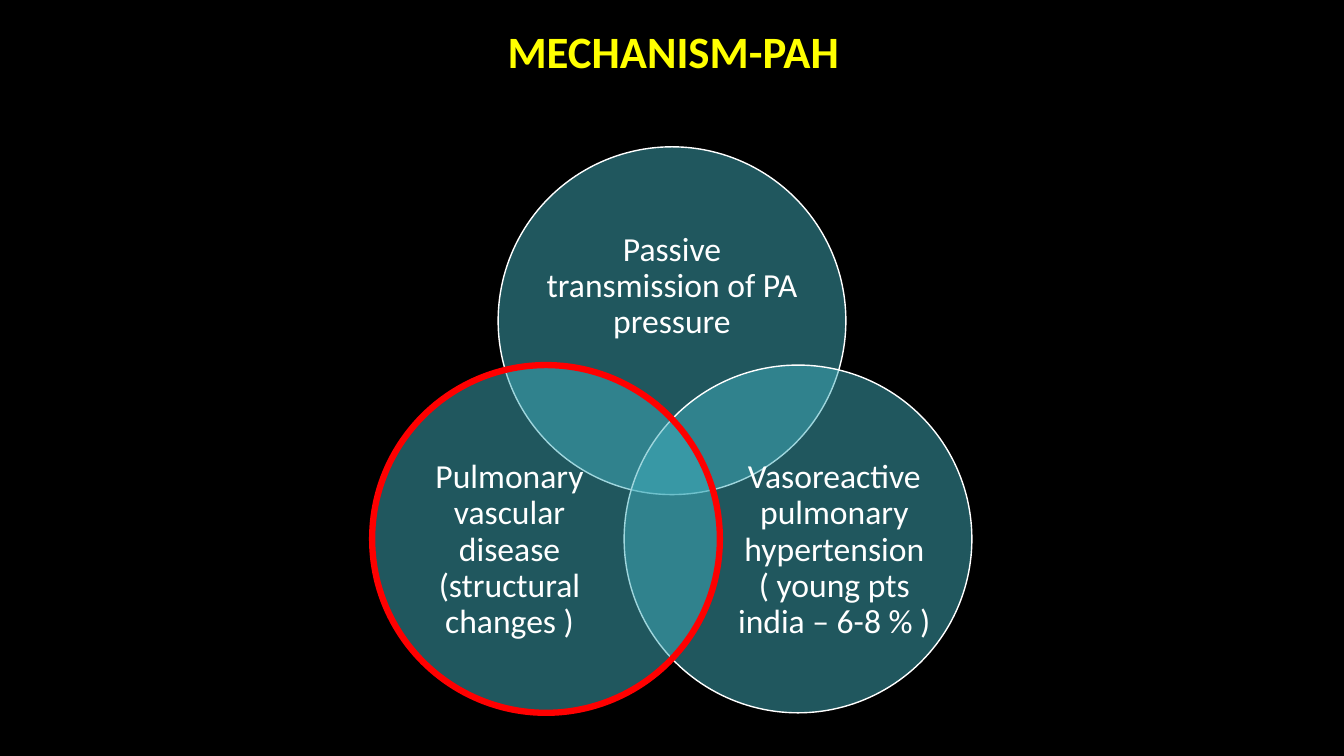
import math
from dataclasses import dataclass

from lxml import etree
from pptx import Presentation
from pptx import util as u
from pptx.dml.color import RGBColor
from pptx.enum import shapes, text
from pptx.oxml.ns import qn


@dataclass(frozen=True)
class Theme:
    font: str = "Calibri"
    background: str = "000000"
    title: str = "FFFF00"
    body: str = "FFFFFF"
    circle: str = "41AEBD"
    outline: str = "FFFFFF"
    highlight: str = "FF0000"
    title_size: int = 32
    body_size: int = 24


def write(tf, content, *, size, color, font, bold=False, line_spacing=0.9):
    p = tf.paragraphs[0]
    p.alignment = text.PP_ALIGN.CENTER
    p.line_spacing = line_spacing
    r = p.add_run()
    r.text = content
    r.font.name = font
    r.font.size = u.Pt(size)
    r.font.bold = bold
    r.font.color.rgb = RGBColor.from_string(color)


class Deck:
    def __init__(self, theme, width, height):
        self.theme = theme
        self.prs = Presentation()
        self.prs.slide_width, self.prs.slide_height = u.Pt(width), u.Pt(height)
        self.s = self.prs.slides.add_slide(self.prs.slide_layouts[6])
        fill = self.s.background.fill
        fill.solid()
        fill.fore_color.rgb = RGBColor.from_string(theme.background)

    def label(self, cx, cy, width, height, content, **fmt):
        """Add a text box centred on (cx, cy)."""
        sp = self.s.shapes.add_textbox(
            u.Pt(cx - width / 2), u.Pt(cy - height / 2), u.Pt(width), u.Pt(height))
        tf = sp.text_frame
        tf.word_wrap = True
        tf.vertical_anchor = text.MSO_ANCHOR.MIDDLE
        tf.margin_left = tf.margin_right = tf.margin_top = tf.margin_bottom = 0
        write(tf, content, font=self.theme.font, **fmt)

    def circle(self, cx, cy, diameter, outline, weight, opacity=50):
        """Add a translucent circle centred on (cx, cy)."""
        sp = self.s.shapes.add_shape(
            shapes.MSO_SHAPE.OVAL, u.Pt(cx - diameter / 2), u.Pt(cy - diameter / 2),
            u.Pt(diameter), u.Pt(diameter))
        sp.shadow.inherit = False
        sp.fill.solid()
        sp.fill.fore_color.rgb = RGBColor.from_string(self.theme.circle)
        color = sp.fill._xPr.find(qn("a:solidFill"))[0]
        etree.SubElement(color, qn("a:alpha")).set("val", str(opacity * 1000))
        sp.line.color.rgb = RGBColor.from_string(outline)
        sp.line.width = u.Pt(weight)


def main():
    theme = Theme()
    deck = Deck(theme, 960, 540)
    deck.label(481, 38.5, 828, 57, "MECHANISM-PAH",
               size=theme.title_size, color=theme.title, bold=True)

    venn_x, venn_y, diameter, spacing = 480, 333, 248.4, 180
    orbit = spacing / math.sqrt(3)
    # angle, outline, line weight, label shift, label size, wording
    mechanisms = [
        (-90, theme.outline, 1, (0, -24.5), (182, 112),
         "Passive transmission of PA pressure"),
        (30, theme.outline, 1, (26, 8), (149, 137),
         "Vasoreactive pulmonary hypertension ( young pts india – 6-8 % )"),
        (150, theme.highlight, 4.5, (-26, 8), (149, 137),
         "Pulmonary vascular disease (structural changes )"),
    ]
    for angle, outline, weight, (dx, dy), (width, height), wording in mechanisms:
        cx = venn_x + orbit * math.cos(math.radians(angle))
        cy = venn_y + orbit * math.sin(math.radians(angle))
        deck.circle(cx, cy, diameter, outline, weight)
        deck.label(cx + dx, cy + dy, width, height, wording,
                   size=theme.body_size, color=theme.body)

    deck.prs.save("out.pptx")


if __name__ == "__main__":
    main()
